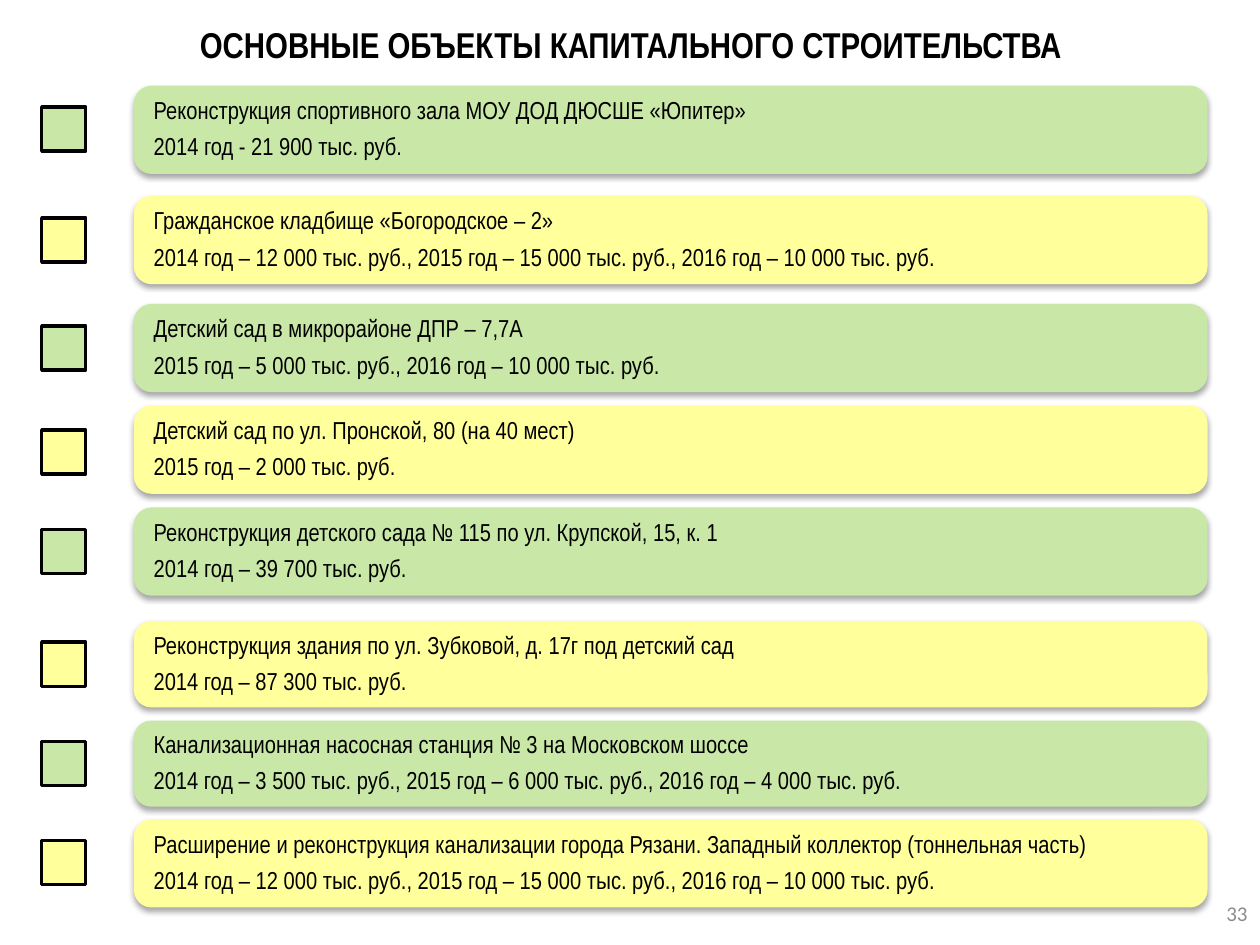
from lxml import etree
from pptx import Presentation
from pptx.dml.color import RGBColor
from pptx.enum.shapes import MSO_SHAPE
from pptx.enum.text import MSO_ANCHOR, MSO_AUTO_SIZE, PP_ALIGN
from pptx.oxml.ns import qn
from pptx.util import Pt

RECT = MSO_SHAPE.RECTANGLE
ROUND = MSO_SHAPE.ROUNDED_RECTANGLE
TOP, MID = MSO_ANCHOR.TOP, MSO_ANCHOR.MIDDLE
LEFT, MIDDLE, RIGHT = PP_ALIGN.LEFT, PP_ALIGN.CENTER, PP_ALIGN.RIGHT
FIXED = MSO_AUTO_SIZE.NONE

NARROW, PLAIN = "Arial Narrow", "Calibri"
COLORS = {"green": "C9E7A7", "yellow": "FFFF9B", "black": "000000", "gray": "8C8C8C"}
SIDE = 25.2

ITEMS = [
    (49, 50.4, 61.2, "Реконструкция спортивного зала МОУ ДОД ДЮСШЕ «Юпитер»",
     "2014 год - 21 900 тыс. руб."),
    (112, 50.4, 124.5, "Гражданское кладбище «Богородское – 2»",
     "2014 год – 12 000 тыс. руб., 2015 год – 15 000 тыс. руб., 2016 год – 10 000 тыс. руб."),
    (173.7, 50.4, 186.2, "Детский сад в микрорайоне ДПР – 7,7А",
     "2015 год – 5 000 тыс. руб., 2016 год – 10 000 тыс. руб."),
    (231.8, 50.4, 245.7, "Детский сад по ул. Пронской, 80 (на 40 мест)",
     "2015 год – 2 000 тыс. руб."),
    (290, 50.4, 302.6, "Реконструкция детского сада № 115 по ул. Крупской, 15, к. 1",
     "2014 год – 39 700 тыс. руб."),
    (355, 49.2, 367, "Реконструкция здания по ул. Зубковой, д. 17г под детский сад",
     "2014 год – 87 300 тыс. руб."),
    (411.8, 49.2, 423.6, "Канализационная насосная станция № 3 на Московском шоссе",
     "2014 год – 3 500 тыс. руб., 2015 год – 6 000 тыс. руб., 2016 год – 4 000 тыс. руб."),
    (468.2, 50.4, 480.4,
     "Расширение и реконструкция канализации города Рязани. Западный коллектор (тоннельная часть)",
     "2014 год – 12 000 тыс. руб., 2015 год – 15 000 тыс. руб., 2016 год – 10 000 тыс. руб."),
]


def color(name):
    return RGBColor.from_string(COLORS[name])


def write(para, text, size, face, tint, align, bold=False):
    para.alignment = align
    run = para.add_run()
    run.text = text
    font = run.font
    font.size, font.name, font.bold = Pt(size), face, bold
    font.color.rgb = color(tint)


def shade(shape):
    shape.shadow.inherit = False
    effects = shape._element.spPr.find(qn("a:effectLst"))
    outer = etree.SubElement(effects, qn("a:outerShdw"), blurRad=str(Pt(3.1)),
                             dist=str(Pt(1.8)), dir="5400000", rotWithShape="0")
    black = etree.SubElement(outer, qn("a:srgbClr"), val=COLORS["black"])
    etree.SubElement(black, qn("a:alpha"), val="35000")


def add_title(slide, box):
    title = slide.shapes.title
    title.left, title.top, title.width, title.height = map(Pt, box)
    frame = title.text_frame
    frame.auto_size, frame.word_wrap = FIXED, True
    frame.vertical_anchor = TOP
    write(frame.paragraphs[0], "ОСНОВНЫЕ ОБЪЕКТЫ КАПИТАЛЬНОГО СТРОИТЕЛЬСТВА",
          20.5, NARROW, "black", MIDDLE, True)


def add_bar(slide, box, tint, lines):
    bar = slide.shapes.add_shape(ROUND, *map(Pt, box))
    bar.adjustments[0] = 0.2
    bar.fill.solid()
    bar.fill.fore_color.rgb = color(tint)
    bar.line.fill.background()
    shade(bar)
    frame = bar.text_frame
    frame.word_wrap, frame.vertical_anchor = True, MID
    frame.margin_left = frame.margin_right = Pt(8.4)
    frame.margin_top = frame.margin_bottom = Pt(0)
    for i, line in enumerate(lines):
        para = frame.add_paragraph() if i else frame.paragraphs[0]
        para.line_spacing = 0.9
        if i:
            para.space_before = Pt(5.5)
        write(para, line, 14, NARROW, "black", LEFT)


def add_mark(slide, box, tint):
    mark = slide.shapes.add_shape(RECT, *map(Pt, box))
    mark.shadow.inherit = False
    mark.fill.solid()
    mark.fill.fore_color.rgb = color(tint)
    mark.line.color.rgb = color("black")
    mark.line.width = Pt(2)


def add_list(slide, left, width, edge):
    for i, (top, height, mark, *lines) in enumerate(ITEMS):
        tint = ("green", "yellow")[i % 2]
        add_bar(slide, (left, top, width, height), tint, lines)
        add_mark(slide, (edge, mark, SIDE, SIDE), tint)


def add_number(slide, box):
    frame = slide.shapes.add_textbox(*map(Pt, box)).text_frame
    frame.word_wrap, frame.vertical_anchor = True, MID
    write(frame.paragraphs[0], "33", 12, PLAIN, "gray", RIGHT)


def main():
    deck = Presentation()
    deck.slide_width, deck.slide_height = Pt(720), Pt(540)
    slide = deck.slides.add_slide(deck.slide_layouts[5])
    add_title(slide, (36.7, 9.4, 648, 49.7))
    add_list(slide, 76.5, 613.5, 23.8)
    add_number(slide, (552, 507.6, 168, 28.8))
    deck.save("out.pptx")


if __name__ == "__main__":
    main()
